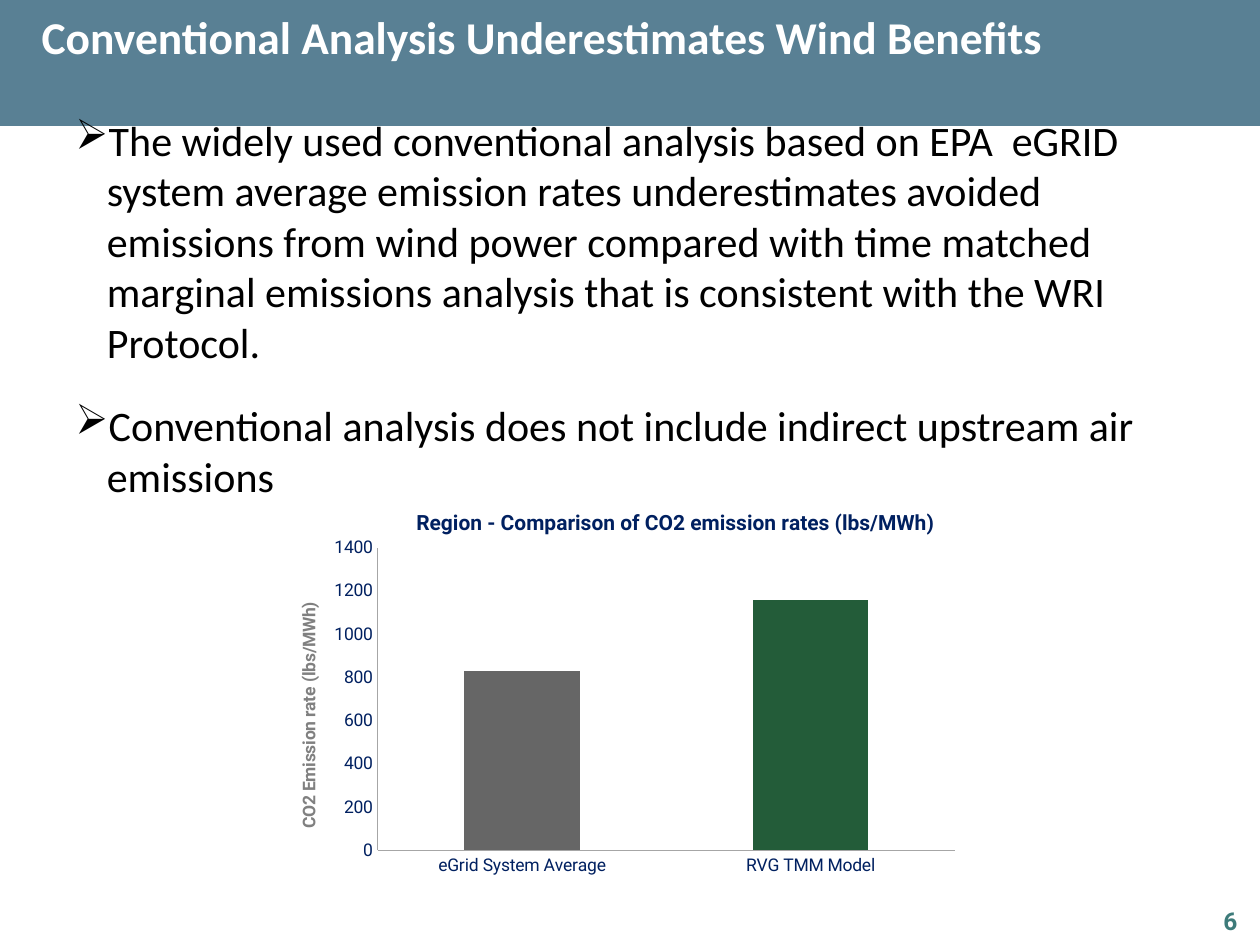
from pptx import Presentation
from pptx.chart.data import CategoryChartData
from pptx.dml.color import RGBColor
from pptx.enum.chart import XL_CHART_TYPE as ChartType, XL_TICK_MARK as Tick
from pptx.enum.text import MSO_ANCHOR as Anchor, MSO_AUTO_SIZE as AutoSize, PP_ALIGN as Align
from pptx.oxml import parse_xml
from pptx.oxml.ns import nsdecls, qn
from pptx.util import Inches, Pt

WHITE = RGBColor(0xFF, 0xFF, 0xFF)
BLACK = RGBColor(0x00, 0x00, 0x00)
SLATE = RGBColor(0x59, 0x80, 0x94)
TEAL = RGBColor(0x3D, 0x7B, 0x7A)
NAVY = RGBColor(0x00, 0x20, 0x60)
GRAY = RGBColor(0x80, 0x80, 0x80)
DARK_GRAY = RGBColor(0x66, 0x66, 0x66)
GREEN = RGBColor(0x23, 0x5C, 0x39)
AXIS_GRAY = RGBColor(0xA6, 0xA6, 0xA6)

WIDTH, HEIGHT, BANNER = 10, 7.5, 0.58
TITLE = "Conventional Analysis Underestimates Wind Benefits"
BULLETS = [
    "The widely used conventional analysis based on EPA \u00a0eGRID system average emission rates "
    "underestimates avoided emissions from wind power\u00a0compared with time matched marginal "
    "emissions analysis that is consistent with the WRI Protocol.",
    "Conventional analysis does not include indirect upstream air emissions",
]
PAGE = "6"
CHART_TITLE = "Region - Comparison of CO2 emission rates (lbs/MWh)"
AXIS_TITLE = "CO2 Emission rate (lbs/MWh)"
BARS = [("eGrid System Average", 830, DARK_GRAY), ("RVG TMM Model", 1160, GREEN)]


def box(left, top, width, height):
    return [Inches(v) for v in (left, top, width, height)]


def style(font, name, size, color, bold=False):
    font.name, font.size, font.bold = name, Pt(size), bold
    font.color.rgb = color


def add_run(p, text, *look):
    r = p.add_run()
    r.text = text
    style(r.font, *look)


def add_bullet(p):
    pPr = p._p.get_or_add_pPr()
    pPr.set("marL", str(Inches(0.25)))
    pPr.set("indent", str(-Inches(0.25)))
    pPr.append(parse_xml(f'<a:buChar {nsdecls("a")} char="➢"/>'))


def make_layout(target="", **shares):
    inner = f'<c:layoutTarget val="{target}"/>' if target else ""
    inner += "".join(f'<c:{k}Mode val="edge"/>' for k in "xy")
    inner += "".join(f'<c:{k} val="{v}"/>' for k, v in shares.items())
    return parse_xml(f'<c:layout {nsdecls("c")}><c:manualLayout>{inner}</c:manualLayout></c:layout>')


def set_title(title, text, size, color, x, y):
    add_run(title.text_frame.paragraphs[0], text, "Roboto", size, color, True)
    el = title._element
    for old in el.findall(qn("c:layout")):
        el.remove(old)
    el.find(qn("c:tx")).addnext(make_layout(x=x, y=y))


def add_banner(s):
    points = [(0, BANNER), (9.5, BANNER), (WIDTH, 0.25), (WIDTH, 0), (0, 0)]
    fb = s.shapes.build_freeform(*points[0], scale=Inches(1))
    fb.add_line_segments(points[1:], close=True)
    sp = fb.convert_to_shape()
    sp.shadow.inherit = False
    sp.fill.solid()
    sp.fill.fore_color.rgb = SLATE
    sp.line.fill.background()
    s.shapes._spTree.insert(2, sp._element)


def add_title(s):
    sp = s.shapes.title
    sp.left, sp.top, sp.width, sp.height = box(0.33, 0, 9.17, BANNER)
    tf = sp.text_frame
    tf.auto_size, tf.vertical_anchor, tf.margin_left = AutoSize.NONE, Anchor.MIDDLE, 0
    p = tf.paragraphs[0]
    p.alignment = Align.LEFT
    add_run(p, TITLE, "Calibri", 26, WHITE, True)


def add_body(s):
    tf = s.shapes.add_textbox(*box(0.5, 0.86, 9, 3)).text_frame
    tf.word_wrap = True
    for i, text in enumerate(BULLETS):
        p = tf.add_paragraph() if i else tf.paragraphs[0]
        add_bullet(p)
        if i:
            p.space_before = Pt(19)
        add_run(p, text, "Calibri", 24, BLACK)


def add_page_number(s):
    tf = s.shapes.add_textbox(*box(9.25, 7.14, 0.67, 0.33)).text_frame
    tf.word_wrap = True
    p = tf.paragraphs[0]
    p.alignment = Align.RIGHT
    add_run(p, PAGE, "Roboto", 14, TEAL, True)


def add_emission_chart(s):
    names, values, colors = zip(*BARS)
    data = CategoryChartData()
    data.categories = names
    data.add_series("Series 1", values)
    chart = s.shapes.add_chart(ChartType.COLUMN_CLUSTERED, *box(2.17, 3.88, 5.52, 3.12), data).chart
    style(chart.font, "Roboto", 10, GRAY)
    chart.has_legend = False
    set_title(chart.chart_title, CHART_TITLE, 12, NAVY, 0.2, 0.04)

    plot = chart.plots[0]
    plot.gap_width, plot.vary_by_categories = 150, False
    series = plot.series[0]
    series.format.fill.solid()
    series.format.fill.fore_color.rgb = SLATE
    for i, color in enumerate(colors):
        fill = series.points[i].format.fill
        fill.solid()
        fill.fore_color.rgb = color

    for axis in (chart.category_axis, chart.value_axis):
        axis.major_tick_mark = axis.minor_tick_mark = Tick.NONE
        axis.has_major_gridlines = False
        axis.format.line.color.rgb = AXIS_GRAY
        style(axis.tick_labels.font, "Roboto", 10, NAVY)
    axis = chart.value_axis
    axis.minimum_scale, axis.maximum_scale, axis.major_unit = 0, 1400, 200
    set_title(axis.axis_title, AXIS_TITLE, 10, GRAY, 0.03, 0.28)

    area = chart._chartSpace.chart.plotArea
    for old in area.findall(qn("c:layout")):
        area.remove(old)
    area.insert(0, make_layout("inner", x=0.15, y=0.15, w=0.83, h=0.77))


def main():
    """Build the wind benefits slide."""
    prs = Presentation()
    prs.slide_width, prs.slide_height = Inches(WIDTH), Inches(HEIGHT)
    s = prs.slides.add_slide(prs.slide_layouts[5])
    add_banner(s)
    add_title(s)
    add_body(s)
    add_page_number(s)
    add_emission_chart(s)
    prs.save("out.pptx")


if __name__ == "__main__":
    main()
